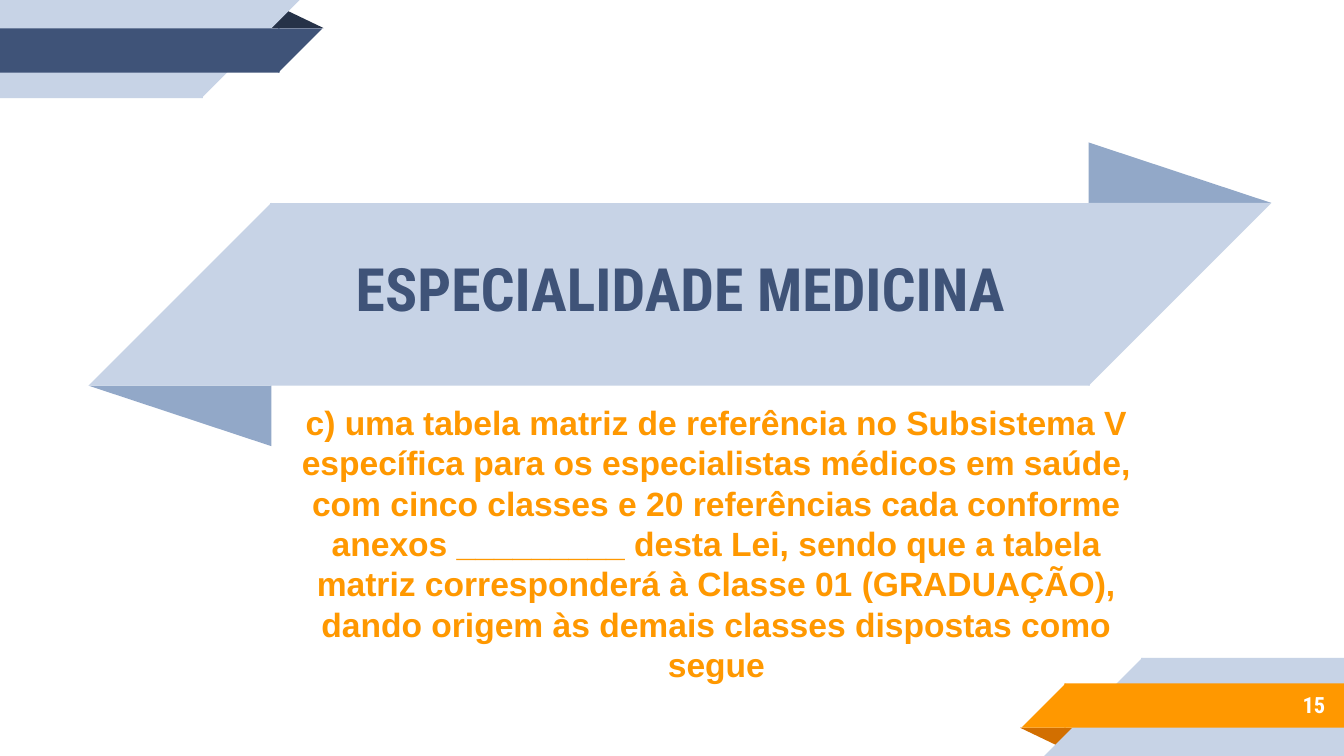
from dataclasses import dataclass, replace

import pptx
import pptx.dml.color
import pptx.enum.shapes
import pptx.enum.text
import pptx.util

Inches = pptx.util.Inches
Pt = pptx.util.Pt
Preset = pptx.enum.shapes.MSO_SHAPE
Align = pptx.enum.text.PP_ALIGN

SLIDE_WIDTH = 10
SLIDE_HEIGHT = SLIDE_WIDTH * 9 / 16
PALE, STEEL, NAVY, NIGHT = "C7D3E6", "92A8C8", "3F5378", "263248"
ORANGE, RUST, WHITE = "FF9800", "D26F00", "FFFFFF"


@dataclass(frozen=True)
class Piece:
    """One part of a folded ribbon; lengths in inches."""
    preset: int
    left: float
    top: float
    width: float
    height: float
    color: str
    rotation: int = 0
    apex: float | None = None


@dataclass(frozen=True)
class TextStyle:
    font: str
    size: int
    color: str
    align: int


def rgb(color: str) -> pptx.dml.color.RGBColor:
    return pptx.dml.color.RGBColor.from_string(color)


def half_turn(piece: Piece, center_x: float, center_y: float) -> Piece:
    """Return the piece turned 180 degrees about a centre."""
    return replace(
        piece,
        left=2 * center_x - piece.left - piece.width,
        top=2 * center_y - piece.top - piece.height,
        rotation=(piece.rotation + 180) % 360,
    )


def draw_piece(slide, piece: Piece) -> None:
    shape = slide.shapes.add_shape(
        piece.preset, Inches(piece.left), Inches(piece.top),
        Inches(piece.width), Inches(piece.height))
    shape.shadow.inherit = False
    shape.fill.solid()
    shape.fill.fore_color.rgb = rgb(piece.color)
    shape.line.fill.background()
    shape.rotation = piece.rotation
    if piece.apex is not None:
        shape.adjustments[0] = piece.apex
    if piece.preset == Preset.RIGHT_TRIANGLE:
        shape.element.spPr.xfrm.set("flipH", "1")


def place(shape, left: float, top: float, width: float, height: float) -> None:
    shape.left, shape.top = Inches(left), Inches(top)
    shape.width, shape.height = Inches(width), Inches(height)


def write(shape, text: str, style: TextStyle) -> None:
    frame = shape.text_frame
    frame.text = text
    frame.word_wrap = True
    frame.auto_size = pptx.enum.text.MSO_AUTO_SIZE.NONE
    frame.vertical_anchor = pptx.enum.text.MSO_ANCHOR.MIDDLE
    frame.margin_left = frame.margin_right = Inches(0.1)
    frame.margin_top = frame.margin_bottom = Inches(0.1)
    paragraph = frame.paragraphs[0]
    paragraph.alignment = style.align
    font = paragraph.runs[0].font
    font.name, font.size, font.bold = style.font, Pt(style.size), True
    font.color.rgb = rgb(style.color)


def add_text(slide, box: tuple[float, float, float, float], text: str, style: TextStyle):
    shape = slide.shapes.add_textbox(*map(Inches, box))
    write(shape, text, style)
    return shape


CORNER_RIBBON = [
    Piece(Preset.ISOSCELES_TRIANGLE, 1.98, 0.07, 0.43, 0.14, NIGHT, apex=0.32),
    Piece(Preset.RECTANGLE, 0, 0, 1.51, 0.73, PALE, 180),
    Piece(Preset.RIGHT_TRIANGLE, 1.5, 0, 0.73, 0.73, PALE, 180),
    Piece(Preset.RECTANGLE, 0, 0.21, 2.08, 0.33, NAVY, 180),
    Piece(Preset.RIGHT_TRIANGLE, 2.07, 0.21, 0.33, 0.33, NAVY, 180),
]
OPPOSITE_COLORS = {NIGHT: RUST, NAVY: ORANGE, PALE: PALE}

BANNER_CENTER = (5.06, 2.19)
BANNER_BODY = Piece(Preset.RECTANGLE, 2.01, 1.51, 6.1, 1.36, PALE, 180)
BANNER_END = [
    Piece(Preset.ISOSCELES_TRIANGLE, 8.1, 1.06, 1.36, 0.45, STEEL, apex=0),
    Piece(Preset.RIGHT_TRIANGLE, 8.1, 1.51, 1.36, 1.36, PALE, 180),
]

BODY_TEXT = (
    "c) uma tabela matriz de referência no Subsistema V específica para os "
    "especialistas médicos em saúde, com cinco classes e 20 referências cada "
    "conforme anexos _________ desta Lei, sendo que a tabela matriz "
    "corresponderá à Classe 01 (GRADUAÇÃO), dando origem às demais classes "
    "dispostas como segue"
)


def main() -> None:
    presentation = pptx.Presentation()
    presentation.slide_width = Inches(SLIDE_WIDTH)
    presentation.slide_height = Inches(SLIDE_HEIGHT)
    slide = presentation.slides.add_slide(presentation.slide_layouts[5])

    opposite_ribbon = [
        replace(half_turn(piece, SLIDE_WIDTH / 2, SLIDE_HEIGHT / 2),
                color=OPPOSITE_COLORS[piece.color])
        for piece in CORNER_RIBBON
    ]
    opposite_end = [half_turn(piece, *BANNER_CENTER) for piece in BANNER_END]
    for piece in [*CORNER_RIBBON, *opposite_ribbon,
                  BANNER_BODY, *BANNER_END, *opposite_end]:
        draw_piece(slide, piece)

    title = slide.shapes.title
    place(title, 0.67, 1.47, 8.79, 1.34)
    write(title, "ESPECIALIDADE MEDICINA",
          TextStyle("Roboto Condensed", 32, NAVY, Align.CENTER))
    # The title has to lie in front of the banner.
    title.element.getparent().append(title.element)

    body = add_text(slide, (2.02, 3.77, 6.62, 0.54), BODY_TEXT,
                    TextStyle("Arial", 18, ORANGE, Align.CENTER))
    paragraph = body.text_frame.paragraphs[0]
    paragraph.space_before, paragraph.space_after = Pt(6), Pt(10)

    add_text(slide, (8.33, 5.07, 1.63, 0.35), "15",
             TextStyle("Roboto Condensed", 12, WHITE, Align.RIGHT))

    presentation.save("out.pptx")


if __name__ == "__main__":
    main()
